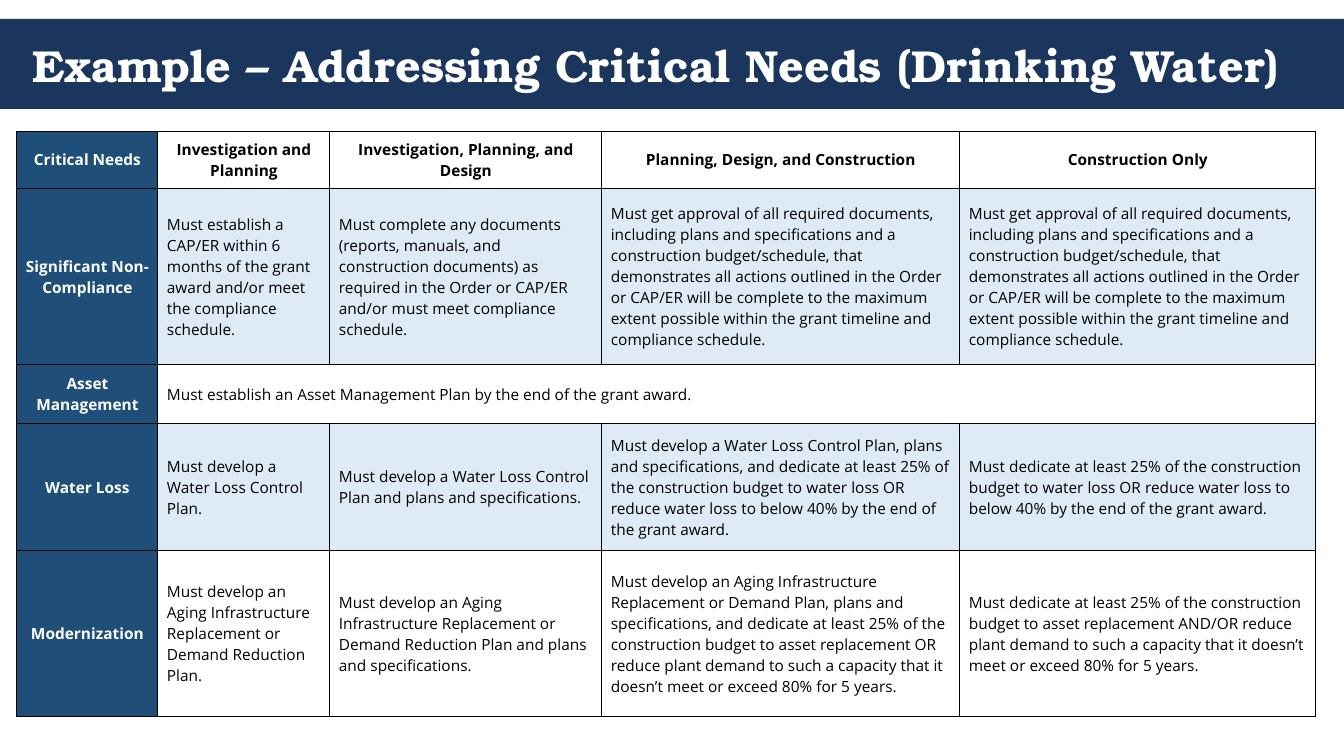
from lxml.etree import SubElement
from pptx import Presentation
from pptx.dml.color import RGBColor
from pptx.enum.shapes import MSO_SHAPE as Preset
from pptx.enum.text import MSO_ANCHOR as Anchor, MSO_AUTO_SIZE as AutoSize, PP_ALIGN as Align
from pptx.oxml.ns import qn
from pptx.util import Pt

SCALE = 914400 / 100.8
NAVY = RGBColor(0x1B, 0x36, 0x5D)
BLUE = RGBColor(0x1F, 0x4E, 0x79)
PALE = RGBColor(0xDE, 0xEA, 0xF6)
WHITE = RGBColor(0xFF, 0xFF, 0xFF)
BLACK = RGBColor(0x00, 0x00, 0x00)

COLUMNS = [141, 172, 272, 358, 356]
ROWS = [58, 176, 59, 127, 166]
APPROVAL = (
    "Must get approval of all required documents, including plans and specifications and a "
    "construction budget/schedule, that demonstrates all actions outlined in the Order or CAP/ER "
    "will be complete to the maximum extent possible within the grant timeline and compliance schedule."
)
NEEDS = [
    ["Critical Needs", "Investigation and Planning", "Investigation, Planning, and Design",
     "Planning, Design, and Construction", "Construction Only"],
    ["Significant Non-Compliance",
     "Must establish a CAP/ER within 6 months of the grant award and/or meet the compliance schedule.",
     "Must complete any documents (reports, manuals, and construction documents) as required in the "
     "Order or CAP/ER and/or must meet compliance schedule.",
     APPROVAL, APPROVAL],
    ["Asset Management", "Must establish an Asset Management Plan by the end of the grant award."],
    ["Water Loss",
     "Must develop a Water Loss Control Plan.",
     "Must develop a Water Loss Control Plan and plans and specifications.",
     "Must develop a Water Loss Control Plan, plans and specifications, and dedicate at least 25% of "
     "the construction budget to water loss OR reduce water loss to below 40% by the end of the grant award.",
     "Must dedicate at least 25% of the construction budget to water loss OR reduce water loss to "
     "below 40% by the end of the grant award."],
    ["Modernization",
     "Must develop an Aging Infrastructure Replacement or Demand Reduction Plan.",
     "Must develop an Aging Infrastructure Replacement or Demand Reduction Plan and plans and specifications.",
     "Must develop an Aging Infrastructure Replacement or Demand Plan, plans and specifications, and "
     "dedicate at least 25% of the construction budget to asset replacement OR reduce plant demand to "
     "such a capacity that it doesn’t meet or exceed 80% for 5 years.",
     "Must dedicate at least 25% of the construction budget to asset replacement AND/OR reduce plant "
     "demand to such a capacity that it doesn’t meet or exceed 80% for 5 years."],
]


def px(length):
    return round(length * SCALE)


class SlideBuilder:
    title_font = "TeX Gyre Bonum"
    body_font = "Open Sans"

    def __init__(self, deck):
        self.slide = deck.slides.add_slide(deck.slide_layouts[5])

    def style(self, paragraph, font, size, color, bold, align):
        paragraph.alignment = align
        for run in paragraph.runs:
            run.font.name = font
            run.font.size = Pt(size)
            run.font.bold = bold
            run.font.color.rgb = color

    def band(self, left, top, width, height):
        band = self.slide.shapes.add_shape(Preset.RECTANGLE, px(left), px(top), px(width), px(height))
        band.shadow.inherit = False
        band.fill.solid()
        band.fill.fore_color.rgb = NAVY
        band.line.fill.background()
        self.slide.shapes.element.insert(2, band.element)

    def title(self, text, left, top, width, height):
        title = self.slide.shapes.title
        title.left, title.top, title.width, title.height = map(px, (left, top, width, height))
        frame = title.text_frame
        frame.text = text
        frame.word_wrap = True
        frame.auto_size = AutoSize.NONE
        frame.vertical_anchor = Anchor.MIDDLE
        self.style(frame.paragraphs[0], self.title_font, 32, WHITE, True, Align.LEFT)

    def border(self, cell):
        properties = cell._tc.get_or_add_tcPr()
        for side in ("a:lnL", "a:lnR", "a:lnT", "a:lnB"):
            line = SubElement(properties, qn(side), w=str(Pt(0.8)))
            SubElement(SubElement(line, qn("a:solidFill")), qn("a:srgbClr"), val=str(BLACK))

    def cell(self, cell, text, fill, color, bold, align):
        self.border(cell)
        cell.fill.solid()
        cell.fill.fore_color.rgb = fill
        cell.vertical_anchor = Anchor.MIDDLE
        cell.margin_left = cell.margin_right = px(9)
        cell.margin_top = cell.margin_bottom = px(5)
        cell.text_frame.text = text
        self.style(cell.text_frame.paragraphs[0], self.body_font, 11, color, bold, align)

    def table(self, entries, left, top, widths, heights):
        frame = self.slide.shapes.add_table(
            len(heights), len(widths), px(left), px(top), px(sum(widths)), px(sum(heights)))
        table = frame.table
        table.first_row = table.horz_banding = False
        for column, width in zip(table.columns, widths):
            column.width = px(width)
        for row, height in zip(table.rows, heights):
            row.height = px(height)
        for r, needs in enumerate(entries):
            for c in range(len(widths)):
                heading = r == 0 or c == 0
                fill = BLUE if c == 0 else PALE if r % 2 else WHITE
                self.cell(table.cell(r, c), needs[c] if c < len(needs) else "", fill,
                          WHITE if c == 0 else BLACK, heading, Align.CENTER if heading else Align.LEFT)
            if len(needs) < len(widths):
                table.cell(r, len(needs) - 1).merge(table.cell(r, len(widths) - 1))


def main():
    deck = Presentation()
    deck.slide_width, deck.slide_height = px(1344), px(756)
    builder = SlideBuilder(deck)
    builder.band(0, 19, 1344, 90)
    builder.title("Example – Addressing Critical Needs (Drinking Water)", 22, 19, 1299, 91)
    builder.table(NEEDS, 17, 131, COLUMNS, ROWS)
    deck.save("out.pptx")


if __name__ == "__main__":
    main()
